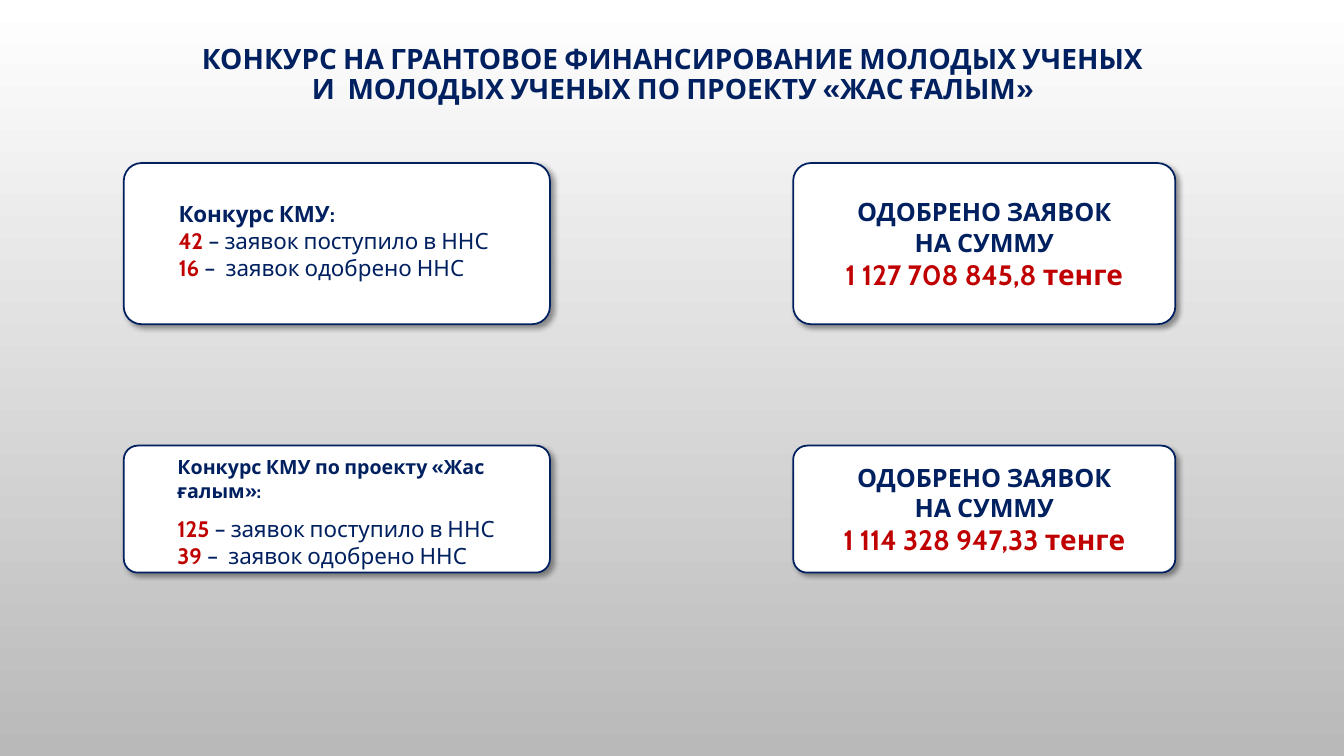
from dataclasses import dataclass
from lxml.etree import SubElement
from pptx import Presentation
from pptx.dml.color import RGBColor
from pptx.enum.shapes import MSO_SHAPE
from pptx.enum.text import MSO_ANCHOR, PP_ALIGN
from pptx.oxml.ns import qn
from pptx.util import Cm, Pt

TITLE = ("КОНКУРС НА ГРАНТОВОЕ ФИНАНСИРОВАНИЕ МОЛОДЫХ УЧЕНЫХ\n"
         "И  МОЛОДЫХ УЧЕНЫХ ПО ПРОЕКТУ «ЖАС ҒАЛЫМ»")
SUM_LABEL = "ОДОБРЕНО ЗАЯВОК\nНА СУММУ"
CONTESTS = [
    {"name": "Конкурс КМУ:", "received": "42", "approved": "16",
     "amount": "1 127 708 845,8 тенге", "name_size": 16,
     "top": 4.11, "height": 4.06, "inset": 0.81, "spacing": None},
    {"name": "Конкурс КМУ по проекту «Жас ғалым»:", "received": "125", "approved": "39",
     "amount": "1 114 328 947,33 тенге", "name_size": 14,
     "top": 11.23, "height": 3.2, "inset": 0.13, "spacing": 1.5},
]
COUNTS_COLUMN = (3.12, 10.74)  # left, width
SUM_COLUMN = (19.99, 9.63)


@dataclass(frozen=True)
class Theme:
    font: str = "Cabin"
    navy: str = "002060"
    red: str = "C00000"
    white: str = "FFFFFF"
    grey: str = "B9B9B9"
    shadow: str = "000000"
    title: int = 20
    label: int = 18
    body: int = 16


THEME = Theme()


def color(code):
    return RGBColor.from_string(code)


def write(frame, spans, first=False, align=PP_ALIGN.LEFT, spacing=None, indent=0):
    """Write one paragraph from (text, size, colour, bold) spans."""
    para = frame.paragraphs[0] if first else frame.add_paragraph()
    para.alignment = align
    if spacing:
        para.line_spacing = spacing
    if indent:
        properties = para._p.get_or_add_pPr()
        properties.set("marL", str(Cm(indent)))
        properties.set("indent", "0")
    for text, size, code, bold in spans:
        for number, line in enumerate(text.split("\n")):
            if number:
                para.add_line_break()
            span = para.add_run()
            span.text = line
            span.font.name = THEME.font
            span.font.size = Pt(size)
            span.font.bold = bold
            span.font.color.rgb = color(code)


def add_shadow(shape):
    shape.shadow.inherit = False
    effects = shape._element.spPr.find(qn("a:effectLst"))
    outer = SubElement(effects, qn("a:outerShdw"), blurRad=str(Pt(4)), dist=str(Pt(3)),
                       dir="2700000", algn="tl", rotWithShape="0")
    tone = SubElement(outer, qn("a:srgbClr"), val=THEME.shadow)
    SubElement(tone, qn("a:alpha"), val="40000")


def add_card(page, column, contest, anchor):
    left, width = column
    card = page.shapes.add_shape(MSO_SHAPE.ROUNDED_RECTANGLE, Cm(left), Cm(contest["top"]),
                                 Cm(width), Cm(contest["height"]))
    card.adjustments[0] = 0.11
    card.fill.solid()
    card.fill.fore_color.rgb = color(THEME.white)
    card.line.color.rgb = color(THEME.navy)
    card.line.width = Pt(1.25)
    add_shadow(card)
    card.text_frame.word_wrap = True
    card.text_frame.vertical_anchor = anchor
    return card.text_frame


def add_contest(page, contest):
    counts = add_card(page, COUNTS_COLUMN, contest, MSO_ANCHOR.TOP)
    counts.margin_top = Cm(contest["inset"])
    write(counts, [(contest["name"], contest["name_size"], THEME.navy, True)],
          first=True, indent=1)
    rows = [(contest["received"], "– заявок поступило в ННС", contest["spacing"]),
            (contest["approved"], "–  заявок одобрено ННС", None)]
    for number, words, spacing in rows:
        write(counts, [(number + " ", THEME.body, THEME.red, True),
                       (words, THEME.body, THEME.navy, False)], spacing=spacing, indent=1)

    total = add_card(page, SUM_COLUMN, contest, MSO_ANCHOR.MIDDLE)
    write(total, [(SUM_LABEL, THEME.label, THEME.navy, True)],
          first=True, align=PP_ALIGN.CENTER)
    write(total, [(contest["amount"], THEME.title, THEME.red, True)], align=PP_ALIGN.CENTER)


def paint_background(page):
    fill = page.background.fill
    fill.gradient()
    fill.gradient_angle = 270
    for stop, position, code in zip(fill.gradient_stops, (0, 1), (THEME.white, THEME.grey)):
        stop.position = position
        stop.color.rgb = color(code)


def main():
    deck = Presentation()
    deck.slide_width, deck.slide_height = Cm(33.87), Cm(19.05)
    page = deck.slides.add_slide(deck.slide_layouts[6])
    paint_background(page)

    box = page.shapes.add_textbox(Cm(2.34), Cm(1.02), Cm(29.21), Cm(1.75))
    box.text_frame.word_wrap = True
    box.text_frame.vertical_anchor = MSO_ANCHOR.MIDDLE
    write(box.text_frame, [(TITLE, THEME.title, THEME.navy, True)],
          first=True, align=PP_ALIGN.CENTER, spacing=0.9)

    for contest in CONTESTS:
        add_contest(page, contest)
    deck.save("out.pptx")


if __name__ == "__main__":
    main()
